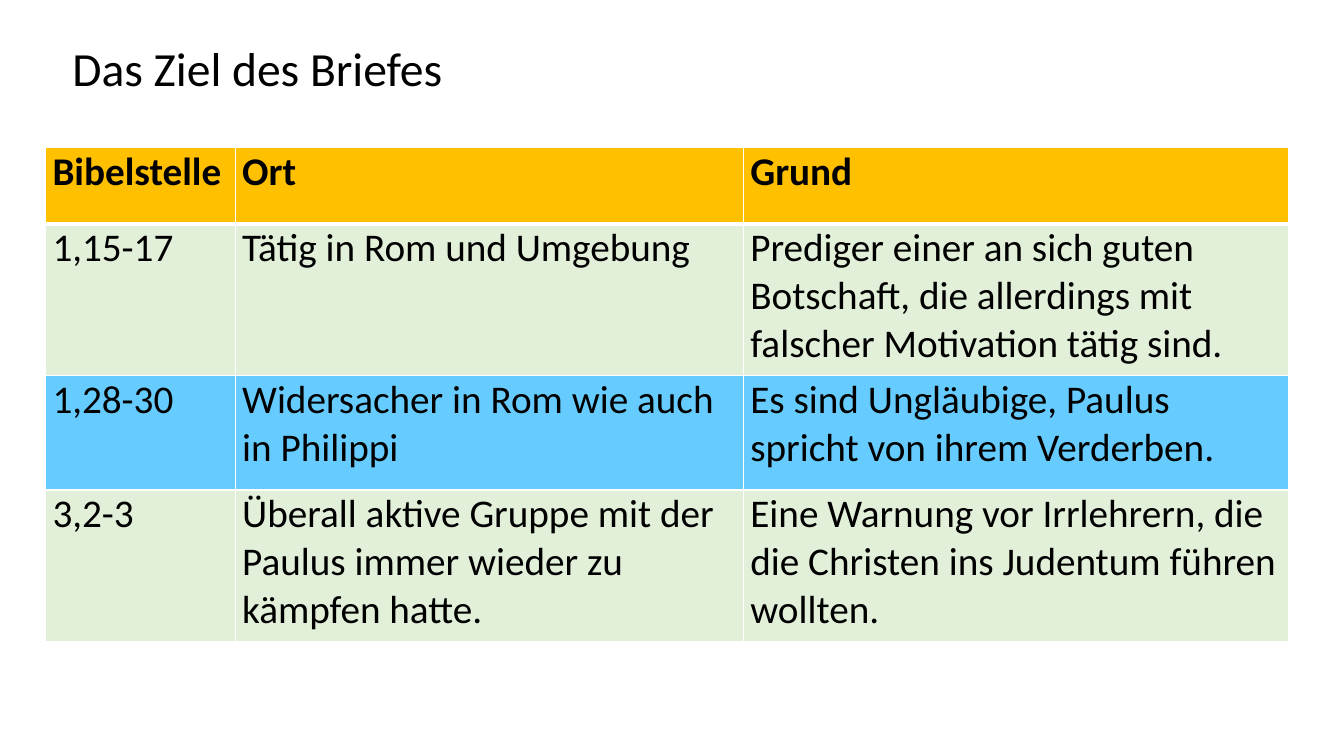
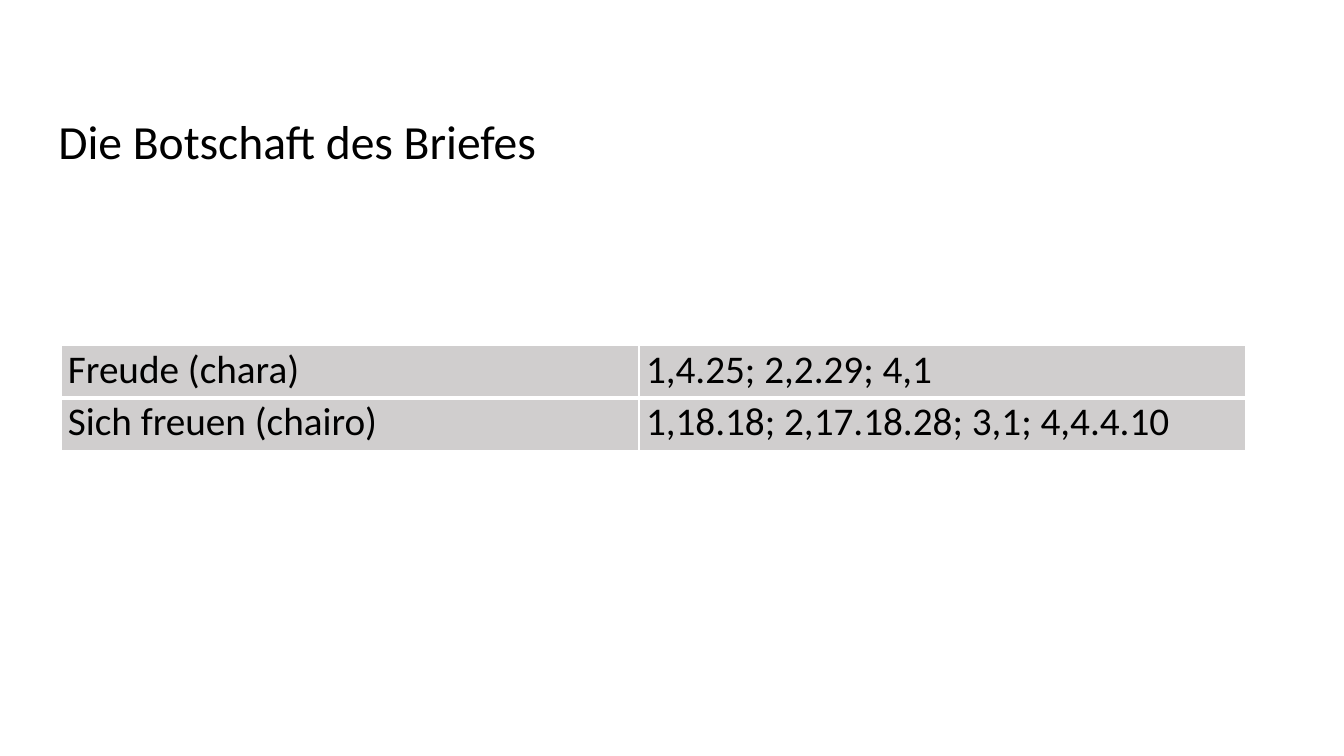
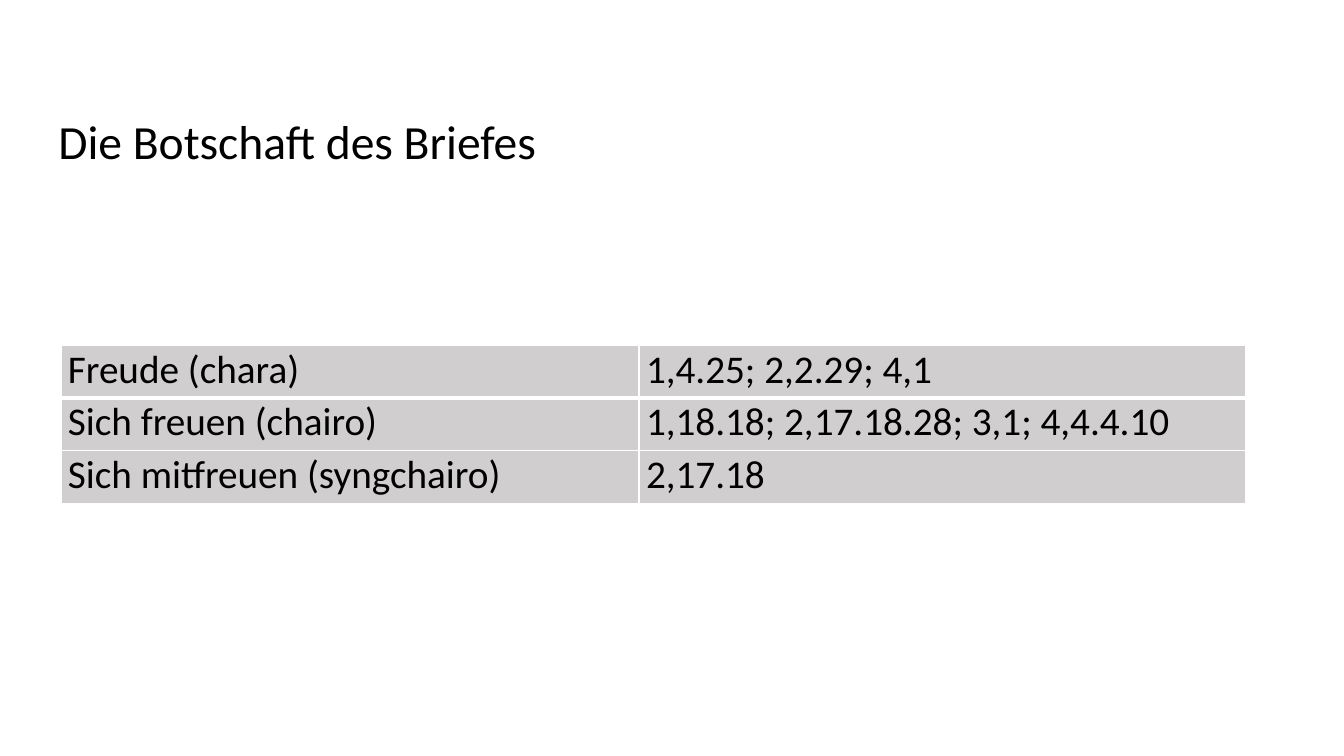
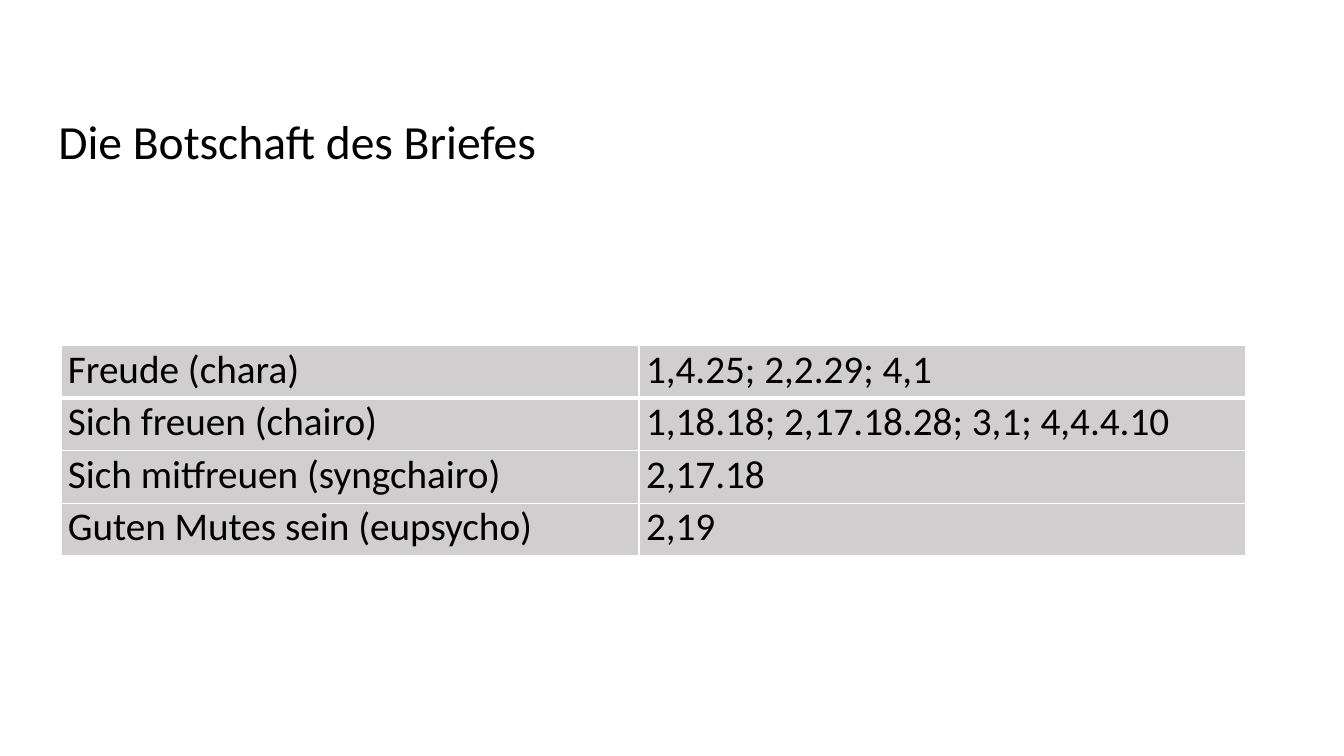
from lxml import etree
from pptx import Presentation
from pptx.dml.color import RGBColor
from pptx.enum import text
from pptx.oxml import ns
from pptx.util import Pt

BLACK = RGBColor(0x00, 0x00, 0x00)
WHITE = RGBColor(0xFF, 0xFF, 0xFF)
AMBER = RGBColor(0xFF, 0xC0, 0x00)
GREEN = RGBColor(0xE2, 0xF0, 0xD9)
BLUE = RGBColor(0x66, 0xCC, 0xFF)
GRAY = RGBColor(0xD0, 0xCE, 0xCE)

FONT = "Calibri"
TITLE_SIZE = 34
TABLE_SIZE = 28
CELL_INSET = 5
THIN, THICK = 1, 3
JOY_ROW_HEIGHT = 37.5

GOAL_ROWS = [
    ("Bibelstelle", "Ort", "Grund"),
    ("1,15-17", "Tätig in Rom und Umgebung",
     "Prediger einer an sich guten Botschaft, die allerdings mit "
     "falscher Motivation tätig sind."),
    ("1,28-30", "Widersacher in Rom wie auch in Philippi",
     "Es sind Ungläubige, Paulus spricht von ihrem Verderben."),
    ("3,2-3",
     "Überall aktive Gruppe mit der Paulus immer wieder zu kämpfen hatte.",
     "Eine Warnung vor Irrlehrern, die die Christen ins Judentum führen "
     "wollten."),
]

JOY_ROWS = [
    ("Freude (chara)", "1,4.25; 2,2.29; 4,1"),
    ("Sich freuen (chairo)", "1,18.18; 2,17.18.28; 3,1; 4,4.4.10"),
    ("Sich mitfreuen (syngchairo)", "2,17.18"),
    ("Guten Mutes sein (eupsycho)", "2,19"),
]


def set_font(paragraph, size, bold=False):
    font = paragraph.font
    font.name, font.size, font.bold = FONT, Pt(size), bold
    font.color.rgb = BLACK


def add_titled_slide(presentation, title, left, top):
    slide = presentation.slides.add_slide(presentation.slide_layouts[5])
    shape = slide.shapes.title
    shape.left, shape.top = Pt(left), Pt(top)
    shape.width, shape.height = Pt(899), Pt(48.5)
    frame = shape.text_frame
    frame.text = title
    frame.word_wrap = True
    frame.auto_size = text.MSO_AUTO_SIZE.SHAPE_TO_FIT_TEXT
    frame.vertical_anchor = text.MSO_ANCHOR.TOP
    frame.paragraphs[0].alignment = text.PP_ALIGN.LEFT
    set_font(frame.paragraphs[0], TITLE_SIZE)
    return slide


def set_borders(cell, top, bottom):
    """Draw white cell borders with the given top and bottom widths."""
    properties = cell._tc.get_or_add_tcPr()
    widths = {"a:lnL": THIN, "a:lnR": THIN, "a:lnT": top, "a:lnB": bottom}
    for tag, width in widths.items():
        line = etree.SubElement(properties, ns.qn(tag), w=str(Pt(width)))
        fill = etree.SubElement(line, ns.qn("a:solidFill"))
        etree.SubElement(fill, ns.qn("a:srgbClr"), val=str(WHITE))


def format_cell(cell, content, color, bold):
    cell.text = content
    cell.margin_left = cell.margin_right = Pt(CELL_INSET)
    cell.margin_top = cell.margin_bottom = 0
    cell.fill.solid()
    cell.fill.fore_color.rgb = color
    set_font(cell.text_frame.paragraphs[0], TABLE_SIZE, bold)


def add_table(slide, rows, left, top, widths, heights, colors,
              bold_header=False):
    """Add a filled table with a thick line below its first row."""
    table = slide.shapes.add_table(
        len(rows), len(widths), Pt(left), Pt(top),
        Pt(sum(widths)), Pt(sum(heights))).table
    for column, width in zip(table.columns, widths):
        column.width = Pt(width)
    for index, (contents, height, color) in enumerate(
            zip(rows, heights, colors)):
        table.rows[index].height = Pt(height)
        for cell, content in zip(table.rows[index].cells, contents):
            set_borders(cell, top=THICK if index == 1 else THIN,
                        bottom=THICK if index == 0 else THIN)
            format_cell(cell, content, color, bold_header and index == 0)


def add_goal_slide(presentation):
    slide = add_titled_slide(presentation, "Das Ziel des Briefes", 44.5, 24.5)
    add_table(slide, GOAL_ROWS, 32.5, 105.5, [135.5, 363, 389.5],
              [54.5, 108.5, 81.5, 108.5], [AMBER, GREEN, BLUE, GREEN],
              bold_header=True)


def add_joy_slide(presentation, count):
    """Show the first count entries of the word list on joy."""
    slide = add_titled_slide(presentation, "Die Botschaft des Briefes",
                             34.5, 76.5)
    add_table(slide, JOY_ROWS[:count], 43.5, 247, [413, 433],
              [JOY_ROW_HEIGHT] * count, [GRAY] * count)


def main():
    presentation = Presentation()
    presentation.slide_width, presentation.slide_height = Pt(960), Pt(540)
    add_goal_slide(presentation)
    for count in range(2, len(JOY_ROWS) + 1):
        add_joy_slide(presentation, count)
    presentation.save("out.pptx")


if __name__ == "__main__":
    main()
